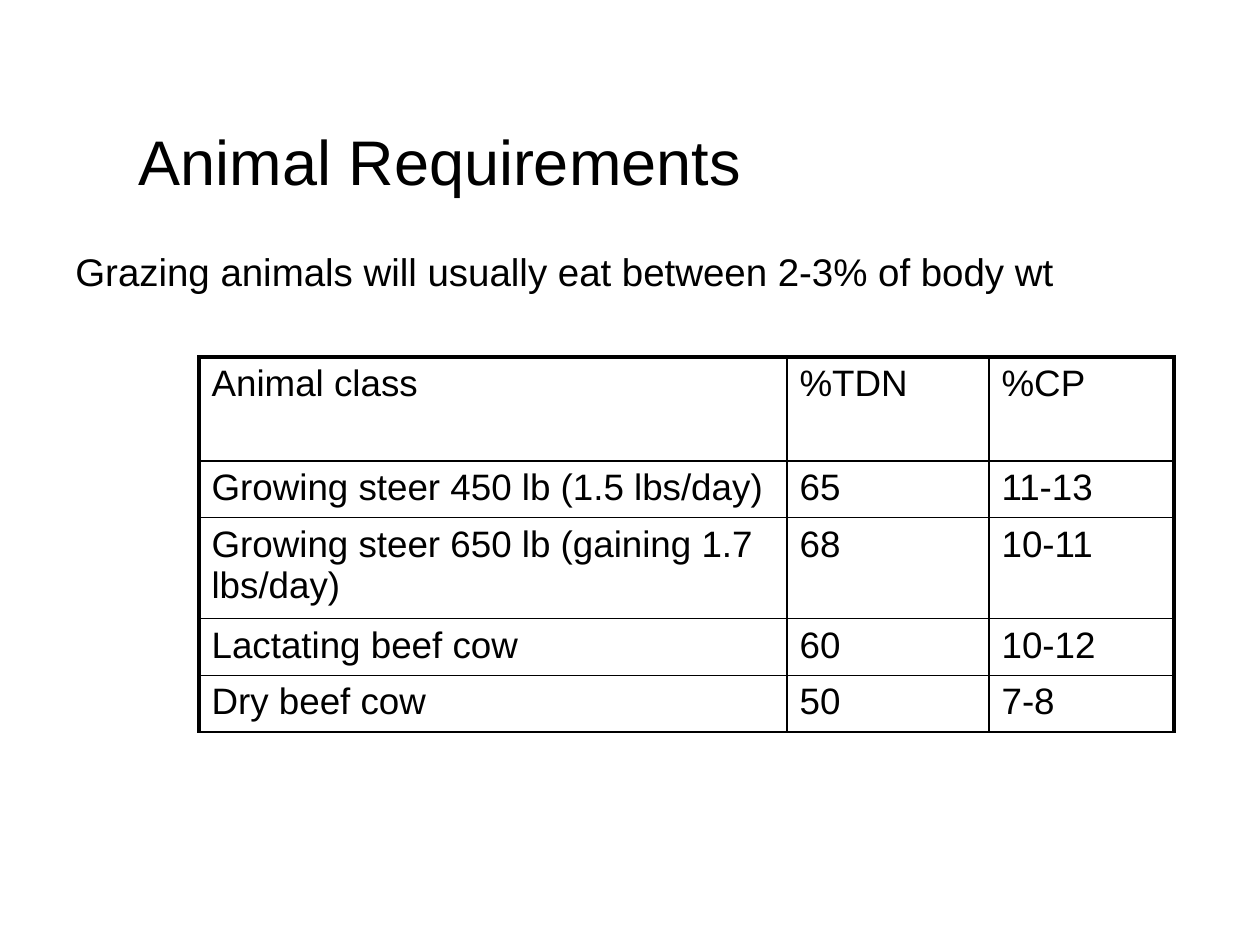
import pptx
import pptx.dml.color
import pptx.enum.text
import pptx.oxml.ns
import pptx.util
from lxml import etree

PX_PER_INCH = 126
COLORS = {"text": "000000", "border": "000000", "background": "FFFFFF"}
FONT = "Arial"
THIN, THICK = 1, 2.25

COLUMN_WIDTHS = [588, 202, 185]
ROW_HEIGHTS = [104, 55, 96, 55, 55]
REQUIREMENTS = [
    ["Animal class", "%TDN", "%CP"],
    ["Growing steer 450 lb (1.5 lbs/day)", "65", "11-13"],
    ["Growing steer 650 lb (gaining 1.7 lbs/day)", "68", "10-11"],
    ["Lactating beef cow", "60", "10-12"],
    ["Dry beef cow", "50", "7-8"],
]


def px(n):
    return pptx.util.Inches(n / PX_PER_INCH)


def rgb(name):
    return pptx.dml.color.RGBColor.from_string(COLORS[name])


def set_text(tf, text, size):
    tf.text = text
    tf.word_wrap = True
    p = tf.paragraphs[0]
    p.alignment = pptx.enum.text.PP_ALIGN.LEFT
    p.font.name = FONT
    p.font.size = pptx.util.Pt(size)
    p.font.bold = False
    p.font.color.rgb = rgb("text")


def set_borders(cell, widths):
    """Draw the cell's sides; widths maps L, R, T, B to points."""
    qn = pptx.oxml.ns.qn
    props = cell._tc.get_or_add_tcPr()
    for i, (side, width) in enumerate(widths.items()):
        line = etree.Element(qn(f"a:ln{side}"), w=str(pptx.util.Pt(width)))
        fill = etree.SubElement(line, qn("a:solidFill"))
        etree.SubElement(fill, qn("a:srgbClr"), val=COLORS["border"])
        props.insert(i, line)


def add_title(s, x, y, w, h):
    title = s.shapes.title
    title.left, title.top, title.width, title.height = map(px, (x, y, w, h))
    tf = title.text_frame
    set_text(tf, "Animal Requirements", 36)
    tf.vertical_anchor = pptx.enum.text.MSO_ANCHOR.TOP
    tf.auto_size = pptx.enum.text.MSO_AUTO_SIZE.NONE


def add_intake_note(s, x, y, w, h):
    sp = s.shapes.add_textbox(*map(px, (x, y, w, h)))
    set_text(sp.text_frame,
             "Grazing animals will usually eat between 2-3% of body wt", 22)


def add_requirements_table(s, x, y):
    n_rows, n_cols = len(ROW_HEIGHTS), len(COLUMN_WIDTHS)
    frame = s.shapes.add_table(n_rows, n_cols, px(x), px(y),
                               px(sum(COLUMN_WIDTHS)), px(sum(ROW_HEIGHTS)))
    table = frame.table
    table.first_row = table.horz_banding = False
    for column, width in zip(table.columns, COLUMN_WIDTHS):
        column.width = px(width)
    for row, height in zip(table.rows, ROW_HEIGHTS):
        row.height = px(height)

    # Thick outline on the left, top and right, thin lines elsewhere
    for i, values in enumerate(REQUIREMENTS):
        for j, value in enumerate(values):
            cell = table.cell(i, j)
            set_text(cell.text_frame, value, 21)
            cell.fill.background()
            set_borders(cell, {
                "L": THICK if j == 0 else THIN,
                "R": THICK if j == n_cols - 1 else THIN,
                "T": THICK if i == 0 else THIN,
                "B": THIN,
            })


def main():
    prs = pptx.Presentation()
    prs.slide_width, prs.slide_height = px(1260), px(945)
    s = prs.slides.add_slide(prs.slide_layouts.get_by_name("Title Only"))
    s.background.fill.solid()
    s.background.fill.fore_color.rgb = rgb("background")

    add_title(s, 126, 116, 998, 88)
    add_intake_note(s, 63, 242, 1124, 59)
    add_requirements_table(s, 199, 357)
    prs.save("out.pptx")


if __name__ == "__main__":
    main()
